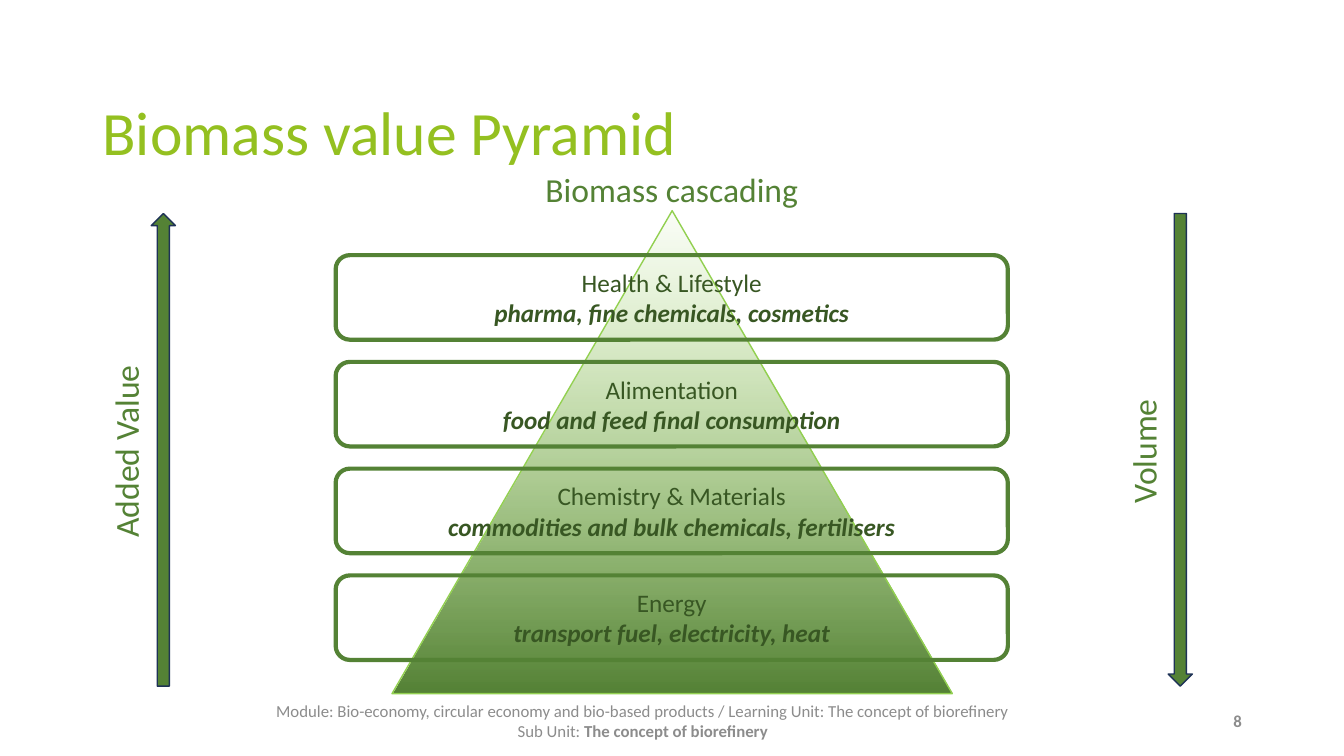
"""Build the biomass value pyramid slide."""
import pptx
import pptx.util
import pptx.dml.color
import pptx.enum.shapes
import pptx.enum.text
import pptx.oxml

Cm, Pt = pptx.util.Cm, pptx.util.Pt
RGBColor = pptx.dml.color.RGBColor
MSO_SHAPE = pptx.enum.shapes.MSO_SHAPE
PP_ALIGN = pptx.enum.text.PP_ALIGN
MSO_ANCHOR = pptx.enum.text.MSO_ANCHOR

LIME = RGBColor(0x94, 0xC0, 0x20)
LEAF = RGBColor(0x92, 0xD0, 0x50)
GREEN = RGBColor(0x54, 0x82, 0x35)
FOREST = RGBColor(0x38, 0x57, 0x23)
NAVY = RGBColor(0x1E, 0x32, 0x56)
GREY = RGBColor(0x8C, 0x8C, 0x8C)


def write(s, lines, size, color, align=PP_ALIGN.CENTER, anchor=MSO_ANCHOR.MIDDLE):
    """Fill a shape with lines, each a list of (text, bold, italic) runs."""
    tf = s.text_frame
    tf.word_wrap = True
    tf.vertical_anchor = anchor
    for i, runs in enumerate(lines):
        p = tf.paragraphs[0] if i == 0 else tf.add_paragraph()
        p.alignment = align
        for text, bold, italic in runs:
            r = p.add_run()
            r.text = text
            r.font.name = "Calibri"
            r.font.size = Pt(size)
            r.font.color.rgb = color
            r.font.bold = bold
            r.font.italic = italic


def add_shape(kind, left, top, width, height, line_color, line_width):
    """Add a preset shape without shadow or fill."""
    s = slide.shapes.add_shape(kind, Cm(left), Cm(top), Cm(width), Cm(height))
    s.shadow.inherit = False
    s.fill.background()
    s.line.color.rgb = line_color
    s.line.width = Pt(line_width)
    return s


prs = pptx.Presentation()
prs.slide_width, prs.slide_height = Cm(33.87), Cm(19.05)
slide = prs.slides.add_slide(prs.slide_layouts[5])

title = slide.shapes.title
title.left, title.top, title.width, title.height = Cm(2.33), Cm(2.12), Cm(29.21), Cm(2.58)
write(title, [[("Biomass value Pyramid", False, False)]], 44, LIME, PP_ALIGN.LEFT)
title.text_frame.paragraphs[0].line_spacing = 0.9

number = slide.shapes.add_textbox(Cm(30.28), Cm(17.65), Cm(1.27), Cm(1.02))
write(number, [[("8", True, False)]], 12, GREY, PP_ALIGN.RIGHT)

footer = slide.shapes.add_textbox(Cm(2.33), Cm(17.32), Cm(27.74), Cm(1.68))
write(footer, [
    [("Module: Bio-economy, circular economy and bio-based products / "
      "Learning Unit: The concept of biorefinery", False, False)],
    [("Sub Unit: ", False, False), ("The concept of biorefinery", True, False)],
], 12, GREY)

pyramid = add_shape(MSO_SHAPE.ISOSCELES_TRIANGLE, 9.88, 5.31, 14.12, 12.17, LEAF, 1)
pyramid.fill.gradient()
pyramid.fill.gradient_angle = 270
stops = pyramid.fill.gradient_stops
for stop, position, color in zip(stops, (0, 1), (LEAF, GREEN)):
    stop.position = position
    stop.color.rgb = color
top_color = pyramid.element.spPr.find(".//" + pptx.oxml.ns.qn("a:gs"))[0]
alpha = pptx.oxml.xmlchemy.OxmlElement("a:alpha")
alpha.set("val", "4000")
top_color.append(alpha)

heading = slide.shapes.add_textbox(Cm(8.46), Cm(4.14), Cm(16.94), Cm(1.27))
write(heading, [[("Biomass cascading", False, False)]], 24, GREEN, anchor=MSO_ANCHOR.TOP)

levels = [
    ("Health & Lifestyle", "pharma, fine chemicals, cosmetics"),
    ("Alimentation", "food and feed final consumption"),
    ("Chemistry & Materials", "commodities and bulk chemicals, fertilisers"),
    ("Energy", "transport fuel, electricity, heat"),
]
for i, (name, products) in enumerate(levels):
    level = add_shape(MSO_SHAPE.ROUNDED_RECTANGLE, 8.46, 6.43 + 2.69 * i, 16.94, 2.13, GREEN, 3)
    write(level, [[(name, False, False)], [(products, True, True)]], 18, FOREST)

axes = [("Volume", 29.44, 0, 23.67), ("Added Value", 3.81, 180, -1.98)]
for name, arrow_left, rotation, label_left in axes:
    arrow = add_shape(MSO_SHAPE.DOWN_ARROW, arrow_left, 5.38, 0.61, 11.91, NAVY, 1)
    arrow.fill.solid()
    arrow.fill.fore_color.rgb = GREEN
    arrow.rotation = rotation
    label = slide.shapes.add_textbox(Cm(label_left), Cm(10.74), Cm(10.29), Cm(1.27))
    label.rotation = 270
    write(label, [[(name, False, False)]], 24, GREEN, anchor=MSO_ANCHOR.TOP)

prs.save("out.pptx")
